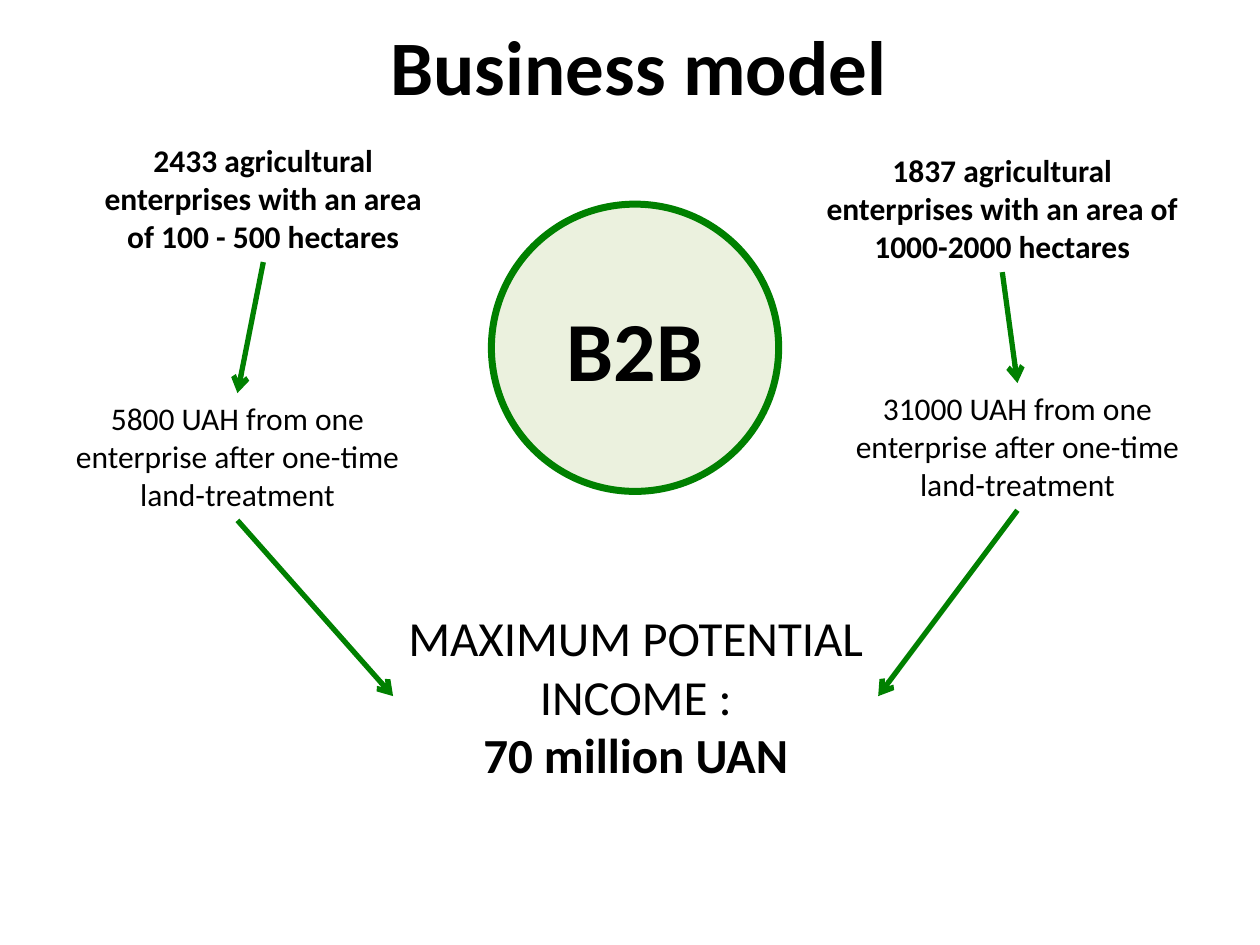
from dataclasses import dataclass

from lxml import etree
from pptx import Presentation
from pptx import util as u
from pptx.dml.color import RGBColor
from pptx.enum import shapes, text
from pptx.oxml import ns


@dataclass(frozen=True)
class Theme:
    font: str = "Calibri"
    ink: str = "000000"
    green: str = "008000"
    pale: str = "EBF1DE"
    head: int = 44
    core: int = 48
    body: int = 18
    sum: int = 28
    ring: int = 4
    arrow: int = 3


THEME = Theme()
MID = text.MSO_ANCHOR.MIDDLE
TOP = text.MSO_ANCHOR.TOP

CORE = ((3.9, 1.62, 2.28, 2.28), [("B2B", True)], THEME.core, MID)
BOXES = {
    "title": ((0.57, -0.11, 9, 1.25), [("Business model", True)], THEME.head, MID),
    "small": ((0.69, 1.07, 2.8, 1.01),
              [("2433 agricultural enterprises with an area of 100 - 500 hectares", True)],
              THEME.body, TOP),
    "large": ((6.42, 1.15, 3.07, 1.01),
              [("1837 agricultural enterprises with an area of 1000-2000 hectares", True)],
              THEME.body, TOP),
    "small fee": ((0.28, 3.12, 3.21, 1.01),
                  [("5800 UAH from one enterprise after one-time land-treatment", False)],
                  THEME.body, TOP),
    "large fee": ((6.42, 3.04, 3.31, 1.01),
                  [("31000 UAH from one enterprise after one-time land-treatment", False)],
                  THEME.body, TOP),
    "income": ((3.12, 4.77, 3.85, 1.51),
               [("MAXIMUM POTENTIAL INCOME :", False), ("70 million UAN", True)],
               THEME.sum, TOP),
}
LINKS = [
    ("small", "small fee", "top"),
    ("large", "large fee", "top"),
    ("small fee", "income", "left"),
    ("large fee", "income", "right"),
]


def rgb(code):
    return RGBColor.from_string(code)


def write(shape, lines, size, anchor):
    frame = shape.text_frame
    frame.word_wrap = True
    frame.vertical_anchor = anchor
    for i, (words, bold) in enumerate(lines):
        para = frame.paragraphs[0] if i == 0 else frame.add_paragraph()
        para.alignment = text.PP_ALIGN.CENTER
        run = para.add_run()
        run.text = words
        run.font.name = THEME.font
        run.font.size = u.Pt(size)
        run.font.bold = bold
        run.font.color.rgb = rgb(THEME.ink)


def side(box, name):
    x, y, w, h = box
    return {
        "top": (x + w / 2, y),
        "bottom": (x + w / 2, y + h),
        "left": (x, y + h / 2),
        "right": (x + w, y + h / 2),
    }[name]


def link(slide, start, end):
    ends = [u.Inches(n) for n in (*start, *end)]
    wire = slide.shapes.add_connector(shapes.MSO_CONNECTOR.STRAIGHT, *ends)
    wire.line.color.rgb = rgb(THEME.green)
    wire.line.width = u.Pt(THEME.arrow)
    tip = etree.SubElement(wire.line._get_or_add_ln(), ns.qn("a:tailEnd"))
    tip.set("type", "arrow")
    etree.SubElement(wire._element.spPr, ns.qn("a:effectLst"))


def main():
    deck = Presentation()
    deck.slide_width, deck.slide_height = u.Inches(10), u.Inches(7.5)
    slide = deck.slides.add_slide(deck.slide_layouts[6])

    box, *copy = CORE
    disc = slide.shapes.add_shape(shapes.MSO_SHAPE.OVAL, *map(u.Inches, box))
    disc.shadow.inherit = False
    disc.fill.solid()
    disc.fill.fore_color.rgb = rgb(THEME.pale)
    disc.line.color.rgb = rgb(THEME.green)
    disc.line.width = u.Pt(THEME.ring)
    write(disc, *copy)

    for box, *copy in BOXES.values():
        write(slide.shapes.add_textbox(*map(u.Inches, box)), *copy)

    for start, end, edge in LINKS:
        link(slide, side(BOXES[start][0], "bottom"), side(BOXES[end][0], edge))

    deck.save("out.pptx")


if __name__ == "__main__":
    main()
